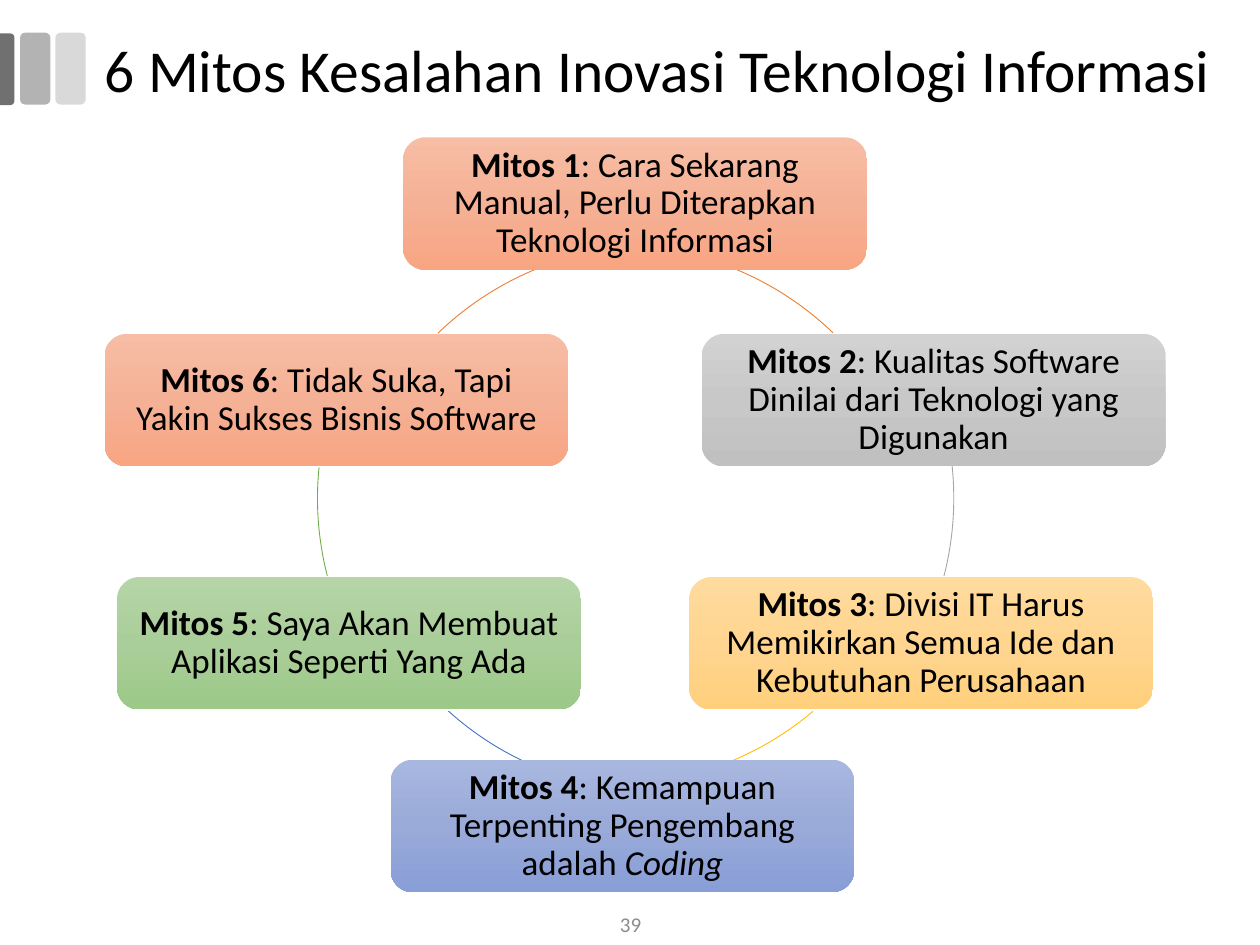
from copy import deepcopy

from pptx import Presentation
from pptx.dml.color import RGBColor
from pptx.enum.shapes import MSO_SHAPE
from pptx.enum.text import MSO_ANCHOR, MSO_AUTO_SIZE, PP_ALIGN
from pptx.oxml.ns import qn
from pptx.util import Inches, Pt

ROUNDED = MSO_SHAPE.ROUNDED_RECTANGLE
TOP_ROUNDED = MSO_SHAPE.ROUND_2_SAME_RECTANGLE
ARC = MSO_SHAPE.ARC
LEFT, CENTER = PP_ALIGN.LEFT, PP_ALIGN.CENTER
MIDDLE = MSO_ANCHOR.MIDDLE
NO_AUTOFIT = MSO_AUTO_SIZE.NONE

CARD_WIDTH, CARD_HEIGHT = 3.68, 1.05
RING_SIZE = 4.95
ANGLE_UNIT = 0.6  # arc adjustment per degree

ORANGE = ("F7BDA5", "F5B196", "F8A582")
GRAY = ("D2D2D2", "C8C8C8", "C0C0C0")
GOLD = ("FFDB9E", "FFD590", "FFD07C")
BLUE = ("A8B7DF", "9AABD9", "889ED7")
GREEN = ("B5D5A7", "AACE9A", "9CC987")

# Left, top, gradient, text after the number, closing italic word
MYTHS = [
    (3.2, 1.09, ORANGE, "Cara Sekarang Manual, Perlu Diterapkan Teknologi Informasi", ""),
    (5.57, 2.65, GRAY, "Kualitas Software Dinilai dari Teknologi yang Digunakan", ""),
    (5.47, 4.58, GOLD, "Divisi IT Harus Memikirkan Semua Ide dan Kebutuhan Perusahaan", ""),
    (3.1, 6.03, BLUE, "Kemampuan Terpenting Pengembang adalah ", "Coding"),
    (0.93, 4.58, GREEN, "Saya Akan Membuat Aplikasi Seperti Yang Ada", ""),
    (0.83, 2.65, ORANGE, "Tidak Suka, Tapi Yakin Sukses Bisnis Software", ""),
]

# Left, top, start and end angle in degrees (clockwise), colour
RING_ARCS = [
    (2.42, 1.95, 292.7, 313.9, "ED7D31"),
    (2.62, 1.48, 354.1, 14.4, "A5A5A5"),
    (2.38, 1.28, 49.8, 67.4, "FFC000"),
    (2.74, 1.33, 115.6, 132, "4472C4"),
    (2.52, 1.48, 165.6, 185.7, "70AD47"),
    (2.72, 1.95, 226, 247.3, "ED7D31"),
]


def color(hex_string):
    return RGBColor.from_string(hex_string)


class SlideBuilder:
    font_name = "Calibri"

    def __init__(self, slide):
        self.slide = slide

    def style(self, paragraph, size, hex_color, align):
        paragraph.alignment = align
        paragraph.font.name = self.font_name
        paragraph.font.size = Pt(size)
        paragraph.font.color.rgb = color(hex_color)

    def shape(self, kind, left, top, width, height):
        shape = self.slide.shapes.add_shape(
            kind, Inches(left), Inches(top), Inches(width), Inches(height))
        shape.shadow.inherit = False
        return shape

    def bar(self, kind, left, top, width, height, hex_color):
        bar = self.shape(kind, left, top, width, height)
        bar.fill.solid()
        bar.fill.fore_color.rgb = color(hex_color)
        bar.line.fill.background()
        return bar

    def arc(self, left, top, start, end, hex_color):
        arc = self.shape(ARC, left, top, RING_SIZE, RING_SIZE)
        arc.adjustments[0] = start * ANGLE_UNIT
        arc.adjustments[1] = end * ANGLE_UNIT
        arc.fill.background()
        arc.line.color.rgb = color(hex_color)
        arc.line.width = Pt(0.5)

    def gradient(self, shape, hex_colors):
        shape.fill.gradient()
        shape.fill.gradient_angle = 270
        stop_list = shape._element.spPr.find(qn("a:gradFill")).find(qn("a:gsLst"))
        stop_list.append(deepcopy(stop_list[0]))
        for index, (stop, hex_color) in enumerate(zip(shape.fill.gradient_stops, hex_colors)):
            stop.position = index / 2
            stop.color.rgb = color(hex_color)

    def card(self, left, top, hex_colors, label, text, italic_ending):
        card = self.shape(ROUNDED, left, top, CARD_WIDTH, CARD_HEIGHT)
        self.gradient(card, hex_colors)
        card.line.fill.background()
        frame = card.text_frame
        frame.word_wrap = True
        frame.vertical_anchor = MIDDLE
        frame.margin_left = frame.margin_right = Inches(0.08)
        frame.margin_top = frame.margin_bottom = Inches(0.08)
        paragraph = frame.paragraphs[0]
        paragraph.line_spacing = 0.9
        self.style(paragraph, 20, "000000", CENTER)
        label_run = paragraph.add_run()
        label_run.text = label
        label_run.font.bold = True
        paragraph.add_run().text = f": {text}"
        if italic_ending:
            ending_run = paragraph.add_run()
            ending_run.text = italic_ending
            ending_run.font.italic = True

    def title(self, text, left, top, width, height):
        title = self.slide.shapes.title
        title.left, title.top = Inches(left), Inches(top)
        title.width, title.height = Inches(width), Inches(height)
        frame = title.text_frame
        frame.text = text
        frame.auto_size = NO_AUTOFIT
        frame.vertical_anchor = MIDDLE
        frame.paragraphs[0].line_spacing = 0.9
        self.style(frame.paragraphs[0], 34, "000000", LEFT)

    def page_number(self, text, left, top, width, height):
        box = self.slide.shapes.add_textbox(
            Inches(left), Inches(top), Inches(width), Inches(height))
        frame = box.text_frame
        frame.word_wrap = True
        frame.vertical_anchor = MIDDLE
        frame.text = text
        self.style(frame.paragraphs[0], 12, "8C8C8C", CENTER)


def main():
    presentation = Presentation()
    presentation.slide_width = Inches(10)
    presentation.slide_height = Inches(7.5)
    builder = SlideBuilder(presentation.slides.add_slide(presentation.slide_layouts[5]))

    # Bars beside the title
    builder.bar(ROUNDED, 0.44, 0.26, 0.24, 0.57, "D9D9D9")
    builder.bar(ROUNDED, 0.16, 0.26, 0.24, 0.57, "B3B3B3")
    edge_bar = builder.bar(TOP_ROUNDED, -0.23, 0.49, 0.57, 0.12, "707070")
    edge_bar.adjustments[0] = 0.29
    edge_bar.rotation = 90

    # Cycle of myths
    for ring_arc in RING_ARCS:
        builder.arc(*ring_arc)
    for number, (left, top, hex_colors, text, ending) in enumerate(MYTHS, start=1):
        builder.card(left, top, hex_colors, f"Mitos {number}", text, ending)

    # Title and page number
    builder.title("6 Mitos Kesalahan Inovasi Teknologi Informasi", 0.73, 0.25, 9.3, 0.67)
    builder.page_number("39", 3.88, 7.17, 2.25, 0.33)

    presentation.save("out.pptx")


if __name__ == "__main__":
    main()
